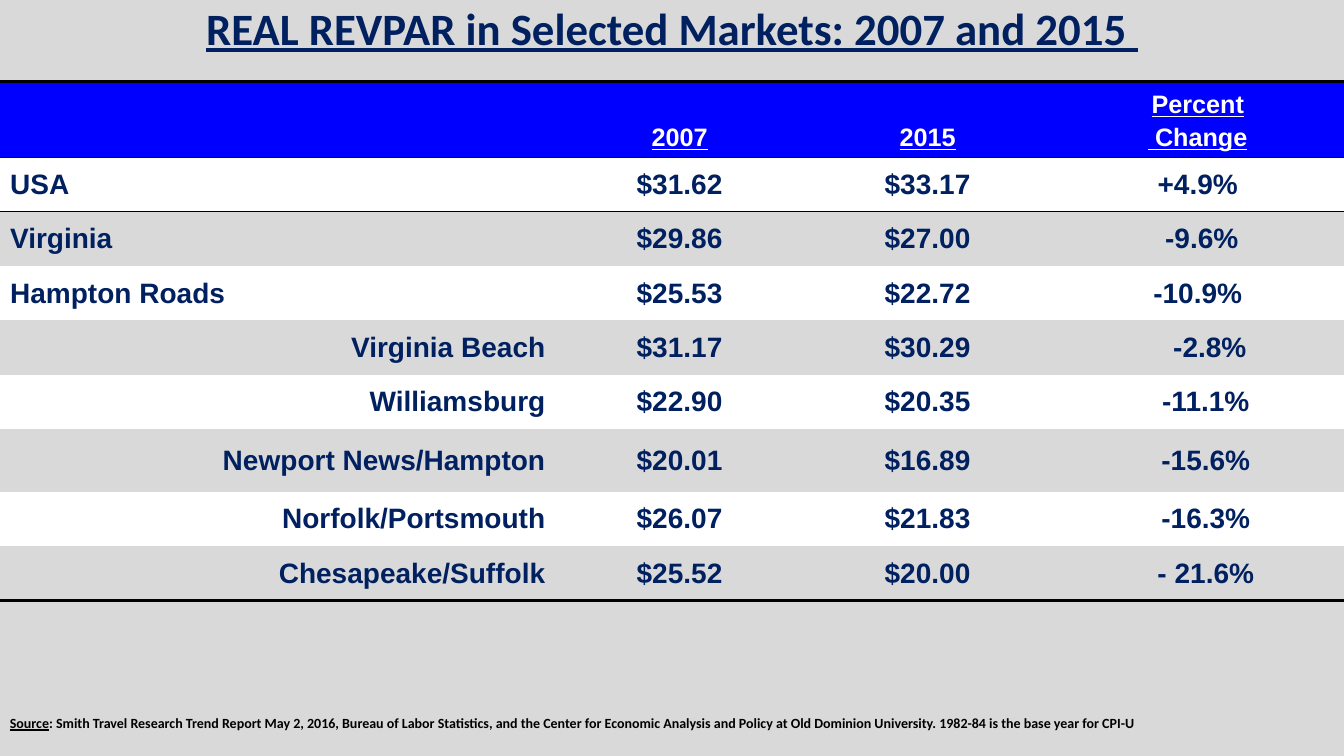
from lxml import etree
from pptx import Presentation
from pptx.dml.color import RGBColor
from pptx.enum.text import MSO_ANCHOR as Anchor, PP_ALIGN as Align
from pptx.oxml.ns import qn
from pptx.util import Inches, Pt

NAVY, BLUE, WHITE, GRAY, BLACK = "002060", "0000FF", "FFFFFF", "D9D9D9", "000000"
NO_STYLE = "{2D5ABB26-0587-4C30-8999-92F81FD0307C}"
COLUMN_WIDTHS = [5.51, 2.46, 2.46, 2.9]
ROW_HEIGHTS = [0.73, 0.54, 0.54, 0.54, 0.54, 0.54, 0.62, 0.54, 0.54]
HEADINGS = ["", "2007", "2015", "Percent\n Change"]
SPACE_WIDTH = 0.08
REGIONS = 3
MARKETS = [
    ("USA", "$31.62", "$33.17", "+4.9%", 0),
    ("Virginia", "$29.86", "$27.00", "-9.6%", 1),
    ("Hampton Roads", "$25.53", "$22.72", "-10.9%", 0),
    ("Virginia Beach", "$31.17", "$30.29", "-2.8%", 3),
    ("Williamsburg", "$22.90", "$20.35", "-11.1%", 2),
    ("Newport News/Hampton", "$20.01", "$16.89", "-15.6%", 2),
    ("Norfolk/Portsmouth", "$26.07", "$21.83", "-16.3%", 2),
    ("Chesapeake/Suffolk", "$25.52", "$20.00", "- 21.6%", 2),
]


def color(value):
    """Return the colour for a hex string."""
    return RGBColor.from_string(value)


def set_font(font, name, size, hue, underline=None):
    """Give a font its bold face, size and colour."""
    font.name, font.size, font.bold = name, Pt(size), True
    font.underline = underline
    font.color.rgb = color(hue)


def add_border(cell, side, width):
    """Draw a black line along the top (lnT) or bottom (lnB) of a cell."""
    properties = cell._tc.get_or_add_tcPr()
    line = etree.Element(qn(f"a:{side}"), w=str(Pt(width)))
    fill = etree.SubElement(line, qn("a:solidFill"))
    etree.SubElement(fill, qn("a:srgbClr"), val=BLACK)
    properties.insert(len(properties.findall(qn("a:lnT"))), line)


def fill_cell(cell, text, fill, align, size, hue, anchor, underline=None):
    """Write one table cell and paint its background."""
    cell.fill.solid()
    cell.fill.fore_color.rgb = color(fill)
    cell.vertical_anchor = anchor
    cell.text = text
    for index, para in enumerate(cell.text_frame.paragraphs):
        para.alignment = align
        if index:
            para.space_before = Pt(size * 0.2)
        set_font(para.font, "Arial", size, hue, underline)


def add_text_box(page, left, top, width, height):
    """Add a wrapping text box and return its frame."""
    box = page.shapes.add_textbox(*map(Inches, (left, top, width, height)))
    box.text_frame.word_wrap = True
    return box.text_frame


def add_title(page, left, top, width, height):
    """Place the underlined slide title."""
    frame = add_text_box(page, left, top, width, height)
    frame.vertical_anchor = Anchor.MIDDLE
    para = frame.paragraphs[0]
    para.text = "REAL REVPAR in Selected Markets: 2007 and 2015 "
    para.alignment, para.line_spacing = Align.CENTER, 0.9
    set_font(para.font, "Calibri", 32, NAVY, True)


def add_market_table(page, left, top, width, height):
    """Place the table of markets."""
    frame = page.shapes.add_table(len(ROW_HEIGHTS), len(COLUMN_WIDTHS),
                                  *map(Inches, (left, top, width, height)))
    table = frame.table
    table.first_row = table.horz_banding = False
    table._tbl.tblPr.find(qn("a:tableStyleId")).text = NO_STYLE
    for column, size in zip(table.columns, COLUMN_WIDTHS):
        column.width = Inches(size)
    for row, size in zip(table.rows, ROW_HEIGHTS):
        row.height = Inches(size)

    for column, heading in enumerate(HEADINGS):
        cell = table.cell(0, column)
        fill_cell(cell, heading, BLUE, Align.CENTER, 18, WHITE, Anchor.BOTTOM, True)
        add_border(cell, "lnT", 2.25)
        add_border(cell, "lnB", 1)
        add_border(table.cell(1, column), "lnT", 1)
        add_border(table.cell(len(MARKETS), column), "lnB", 3)

    for row, (*values, indent) in enumerate(MARKETS, start=1):
        name_align = Align.LEFT if row <= REGIONS else Align.RIGHT
        for column, value in enumerate(values):
            fill_cell(table.cell(row, column), value, WHITE if row % 2 else GRAY,
                      Align.CENTER if column else name_align, 20, NAVY, Anchor.MIDDLE)
        table.cell(row, 3).margin_left = Inches(0.1 + indent * SPACE_WIDTH)


def add_source(page, left, top, width, height):
    """Place the source line."""
    para = add_text_box(page, left, top, width, height).paragraphs[0]
    set_font(para.font, "Calibri", 10, BLACK)
    label = para.add_run()
    label.text = "Source"
    label.font.underline = True
    para.add_run().text = (
        ": Smith Travel Research Trend Report May 2, 2016, Bureau of Labor Statistics, "
        "and the Center for Economic Analysis and Policy at Old Dominion University. "
        "1982-84 is the base year for CPI-U")


def main():
    """Build and save the deck."""
    deck = Presentation()
    deck.slide_width, deck.slide_height = Inches(13.33), Inches(7.5)
    page = deck.slides.add_slide(deck.slide_layouts[6])
    page.background.fill.solid()
    page.background.fill.fore_color.rgb = color(GRAY)
    add_title(page, 0, 0, 13.33, 0.61)
    add_market_table(page, 0, 0.81, sum(COLUMN_WIDTHS), sum(ROW_HEIGHTS))
    add_source(page, 0, 7.04, 11.97, 0.27)
    deck.save("out.pptx")


if __name__ == "__main__":
    main()
